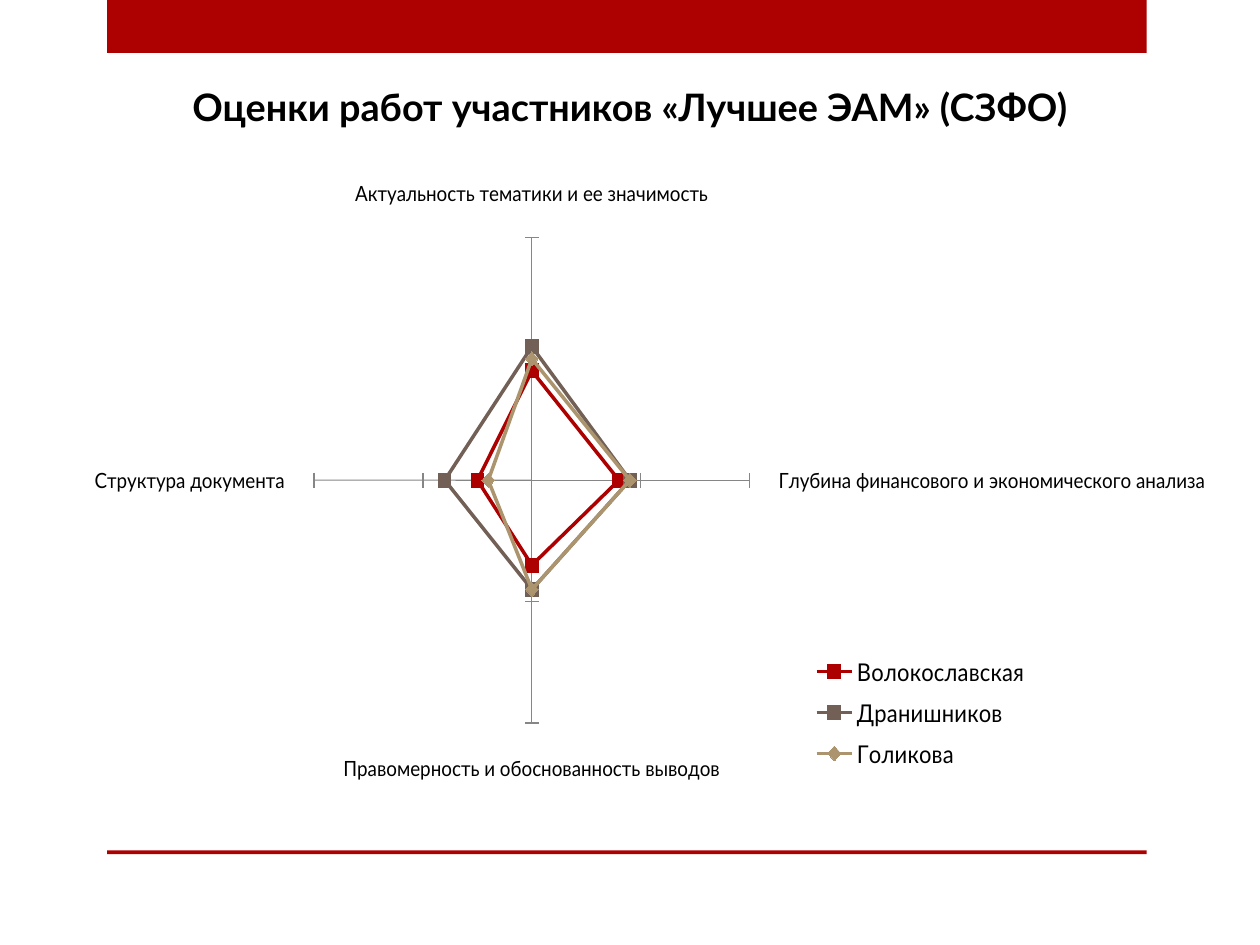
from dataclasses import dataclass

from lxml.etree import SubElement
from pptx import Presentation
from pptx.chart.data import CategoryChartData
from pptx.dml.color import RGBColor
from pptx.enum.chart import (XL_CHART_TYPE, XL_LEGEND_POSITION,
                             XL_MARKER_STYLE, XL_TICK_LABEL_POSITION,
                             XL_TICK_MARK)
from pptx.enum.shapes import MSO_SHAPE
from pptx.enum.text import MSO_ANCHOR, PP_ALIGN
from pptx.oxml import parse_xml
from pptx.oxml.ns import nsdecls, qn
from pptx.util import Inches, Pt

WIDE, HIGH = Inches(10), Inches(7.5)


@dataclass(frozen=True)
class Theme:
    red: str = "AD0101"
    brown: str = "726056"
    sand: str = "AC956E"
    grey: str = "868686"
    ink: str = "000000"
    face: str = "Lato"
    base: str = "Times New Roman"
    title: float = 21.6
    label: float = 12
    legend: float = 14
    small: float = 10


LOOK = Theme()
CATS = ["Актуальность тематики и ее значимость",
        "Глубина финансового и экономического анализа",
        "Правомерность и обоснованность выводов",
        "Структура документа"]
# Name, scores, colour, marker
MARKS = [
    ("Волокославская", (96, 94, 92, 88), LOOK.red, XL_MARKER_STYLE.SQUARE),
    ("Дранишников", (100, 96, 96, 94), LOOK.brown, XL_MARKER_STYLE.SQUARE),
    ("Голикова", (98, 96, 96, 86), LOOK.sand, XL_MARKER_STYLE.DIAMOND),
]


def apply(item, **vals):
    for key, val in vals.items():
        setattr(item, key, val)


def paint(fill, tone):
    fill.solid()
    fill.fore_color.rgb = RGBColor.from_string(tone)


def style(font, size, face=LOOK.face, bold=False):
    apply(font, size=Pt(size), name=face, bold=bold)
    font.color.rgb = RGBColor.from_string(LOOK.ink)


def area(left, top, wide, high):
    """Turn shares of the slide into lengths."""
    return (int(left * WIDE), int(top * HIGH),
            int(wide * WIDE), int(high * HIGH))


def add_bar(slide, top, high):
    bar = slide.shapes.add_shape(MSO_SHAPE.RECTANGLE,
                                 *area(0.085, top, 0.825, high))
    bar.shadow.inherit = False
    paint(bar.fill, LOOK.red)
    bar.line.fill.background()


def add_title(slide, text):
    frame = slide.shapes.add_textbox(*area(0.05, 0.08, 0.9, 0.063)).text_frame
    apply(frame, word_wrap=True, vertical_anchor=MSO_ANCHOR.BOTTOM)
    para = frame.paragraphs[0]
    apply(para, text=text, alignment=PP_ALIGN.CENTER)
    style(para.runs[0].font, LOOK.title, bold=True)


def place(part, after, inner, **vals):
    """Give a chart part a fixed layout in shares of the chart."""
    for old in part.findall(qn("c:layout")):
        part.remove(old)
    layout = parse_xml(f"<c:layout {nsdecls('c')}/>")
    manual = SubElement(layout, qn("c:manualLayout"))
    rows = [("layoutTarget", "inner")] if inner else []
    rows += [("xMode", "edge"), ("yMode", "edge"), *vals.items()]
    for tag, val in rows:
        SubElement(manual, qn(f"c:{tag}")).set("val", str(val))
    if after is None:
        part.insert(0, layout)
    else:
        after.addnext(layout)


def set_axes(chart):
    cat, val = chart.category_axis, chart.value_axis
    apply(cat, has_major_gridlines=True, major_tick_mark=XL_TICK_MARK.OUTSIDE)
    style(cat.tick_labels.font, LOOK.label)
    apply(val, has_major_gridlines=False, minimum_scale=78, maximum_scale=118,
          major_unit=20, major_tick_mark=XL_TICK_MARK.CROSS,
          tick_label_position=XL_TICK_LABEL_POSITION.NONE)
    for line in (cat.format.line, val.format.line,
                 cat.major_gridlines.format.line):
        paint(line.fill, LOOK.grey)
        line.width = Pt(0.75)


def set_lines(plot):
    for line, (_, _, tone, mark) in zip(plot.series, MARKS):
        line.smooth = False
        paint(line.format.line.fill, tone)
        line.format.line.width = Pt(2.25)
        apply(line.marker, style=mark, size=8)
        paint(line.marker.format.fill, tone)
        paint(line.marker.format.line.fill, tone)


def add_radar(slide):
    data = CategoryChartData()
    data.categories = CATS
    for name, vals, _, _ in MARKS:
        data.add_series(name, vals)
    chart = slide.shapes.add_chart(XL_CHART_TYPE.RADAR_MARKERS,
                                   *area(0.075, 0.132, 0.882, 0.745),
                                   data).chart
    apply(chart, has_title=False, has_legend=True)
    style(chart.font, LOOK.small, LOOK.base)
    set_axes(chart)
    set_lines(chart.plots[0])

    # Legend
    legend = chart.legend
    apply(legend, position=XL_LEGEND_POSITION.RIGHT, include_in_layout=False)
    style(legend.font, LOOK.legend)
    key = legend._element
    place(key, key.find(qn("c:legendPos")), False,
          x=0.67, y=0.74, w=0.22, h=0.19)

    # Plot
    plot = chart._chartSpace.chart.plotArea
    place(plot, None, True, x=0.17, y=0.16, w=0.44, h=0.69)


def main():
    deck = Presentation()
    apply(deck, slide_width=WIDE, slide_height=HIGH)
    slide = deck.slides.add_slide(deck.slide_layouts[6])
    # Frame: top band and bottom rule
    for top, high in ((0, 0.056), (0.9, 0.004)):
        add_bar(slide, top, high)
    add_title(slide, "Оценки работ участников «Лучшее ЭАМ» (СЗФО)")
    add_radar(slide)
    deck.save("out.pptx")


if __name__ == "__main__":
    main()
